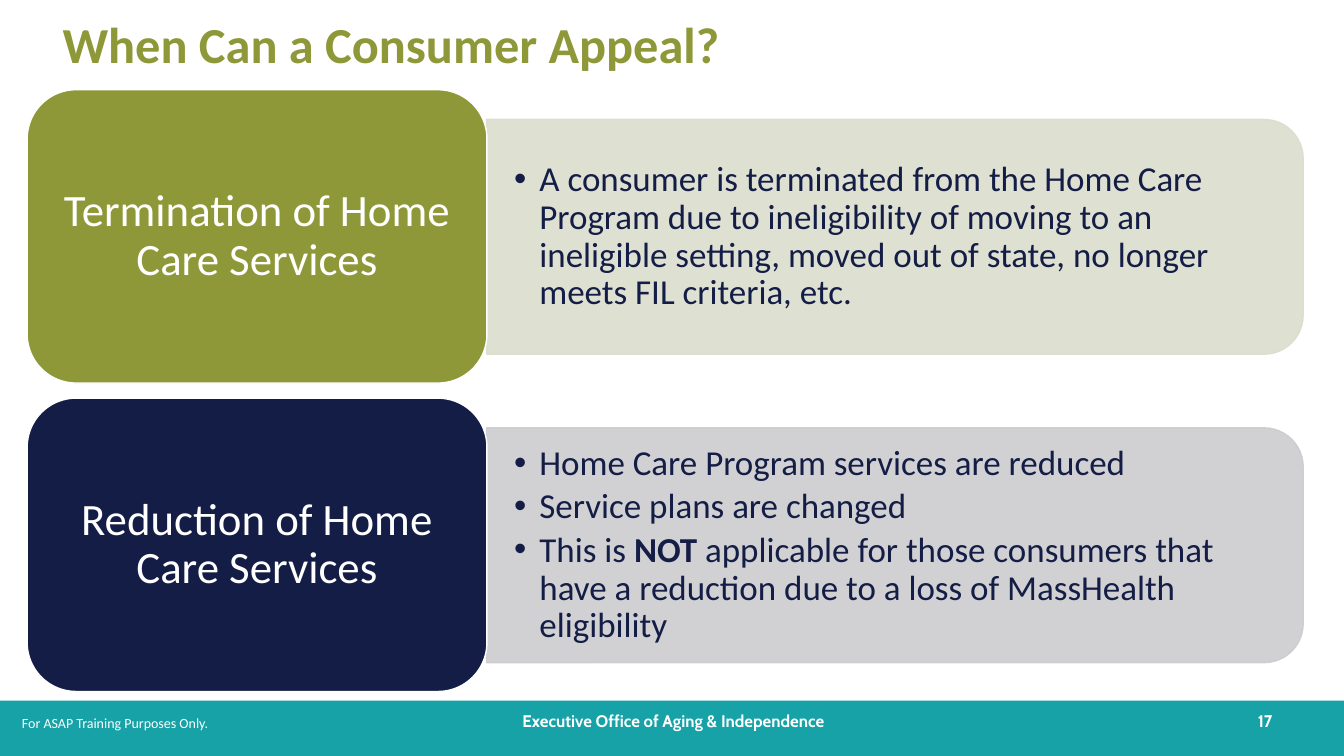
from lxml import etree
from pptx import Presentation
from pptx.dml.color import RGBColor
from pptx.enum.shapes import MSO_SHAPE
from pptx.enum.text import MSO_ANCHOR, MSO_AUTO_SIZE, PP_ALIGN
from pptx.oxml.ns import qn
from pptx.util import Emu, Pt

LEFT, CENTER, RIGHT = PP_ALIGN.LEFT, PP_ALIGN.CENTER, PP_ALIGN.RIGHT
TOP, MIDDLE = MSO_ANCHOR.TOP, MSO_ANCHOR.MIDDLE
NO_AUTOFIT = MSO_AUTO_SIZE.NONE
RECT, ROUNDED = MSO_SHAPE.RECTANGLE, MSO_SHAPE.ROUNDED_RECTANGLE
TWO_ROUNDED = MSO_SHAPE.ROUND_2_SAME_RECTANGLE
TWO_CONTENT_LAYOUT = 3
EMU_PER_PX = 9144  # 100 px to the inch
ROW_PITCH = 306

COLORS = {
    "teal": "16A2A7",
    "title": "8E9838",
    "olive": "8F9838",
    "olive tint": "DBDDCE",
    "navy": "141D45",
    "navy tint": "CCCCCF",
    "white": "FFFFFF",
}

REASONS = [
    ("Termination of Home Care Services", "olive", [
        ["A consumer is terminated from the Home Care Program due to ineligibility of "
         "moving to an ineligible setting, moved out of state, no longer meets FIL "
         "criteria, etc."],
    ]),
    ("Reduction of Home Care Services", "navy", [
        ["Home Care Program services are reduced"],
        ["Service plans are changed"],
        ["This is ", "NOT", " applicable for those consumers that have a reduction due "
         "to a loss of MassHealth eligibility"],
    ]),
]


def px(length):
    return Emu(length * EMU_PER_PX)


def color(name):
    return RGBColor.from_string(COLORS[name])


class SlideBuilder:
    def __init__(self, slide, font="Calibri", footer_font="Cabin"):
        self.slide = slide
        self.font = font
        self.footer_font = footer_font

    def place(self, item, box):
        item.left, item.top, item.width, item.height = map(px, box)

    def frame(self, item, anchor, insets=(10, 5)):
        frame = item.text_frame
        frame.word_wrap = True
        frame.auto_size = NO_AUTOFIT
        frame.vertical_anchor = anchor
        frame.margin_left = frame.margin_right = px(insets[0])
        frame.margin_top = frame.margin_bottom = px(insets[1])
        return frame

    def style(self, paragraph, size, tone, align=LEFT, bold=False, font=None, spacing=1.0):
        paragraph.alignment = align
        paragraph.line_spacing = spacing
        for run in paragraph.runs:
            run.font.name = font or self.font
            run.font.size = Pt(size)
            run.font.bold = bold
            run.font.color.rgb = color(tone)

    def title(self, words, box):
        heading = self.slide.shapes.title
        self.place(heading, box)
        frame = self.frame(heading, TOP, (0, 0))
        frame.text = words
        self.style(frame.paragraphs[0], 36, "title", bold=True, spacing=0.9)

    def shape(self, kind, box, fill, line=None):
        item = self.slide.shapes.add_shape(kind, *map(px, box))
        item.shadow.inherit = False
        item.fill.solid()
        item.fill.fore_color.rgb = color(fill)
        if line:
            item.line.color.rgb = color(line)
            item.line.width = Pt(1)
        else:
            item.line.fill.background()
        return item

    def panel(self, box, tint):
        """Add a translucent panel rounded on its right side only."""
        x, y, width, height = box
        shift = (width - height) // 2
        item = self.shape(TWO_ROUNDED, (x + shift, y - shift, height, width), tint, tint)
        item.rotation = 90
        for shade in item.element.spPr.iter(qn("a:srgbClr")):
            etree.SubElement(shade, qn("a:alpha"), val="90000")

    def card(self, words, box, fill):
        frame = self.frame(self.shape(ROUNDED, box, fill, "white"), MIDDLE, (14, 7))
        frame.text = words
        self.style(frame.paragraphs[0], 32, "white", CENTER, spacing=0.9)

    def bullets(self, placeholder, items, box):
        """Fill a body placeholder; every second run of an item is bold."""
        self.place(placeholder, box)
        self.slide.shapes.element.append(placeholder.element)  # in front of its panel
        frame = self.frame(placeholder, MIDDLE, (27, 14))
        for index, parts in enumerate(items):
            paragraph = frame.add_paragraph() if index else frame.paragraphs[0]
            properties = paragraph._p.get_or_add_pPr()
            properties.set("marL", str(px(25)))
            properties.set("indent", str(px(-25)))
            etree.SubElement(properties, qn("a:buChar"), char="•")
            for part in parts:
                paragraph.add_run().text = part
            self.style(paragraph, 25, "navy", spacing=0.9)
            paragraph.space_before = Pt(0)
            paragraph.space_after = Pt(4)
            for emphasis in paragraph.runs[1::2]:
                emphasis.font.bold = True

    def text(self, words, box, size, align=LEFT, anchor=TOP, bold=False, font=None):
        frame = self.frame(self.slide.shapes.add_textbox(*map(px, box)), anchor)
        frame.text = words
        self.style(frame.paragraphs[0], size, "white", align, bold, font)

    def footer(self, words, box, align):
        self.text(words, box, 12, align, MIDDLE, True, self.footer_font)


def main():
    deck = Presentation()
    deck.slide_width, deck.slide_height = px(1333), px(750)
    slide = deck.slides.add_slide(deck.slide_layouts[TWO_CONTENT_LAYOUT])
    builder = SlideBuilder(slide)

    builder.shape(RECT, (0, 695, 1333, 55), "teal")
    builder.footer("Executive Office of Aging & Independence", (443, 695, 450, 40), CENTER)
    builder.footer("17", (1221, 695, 51, 40), RIGHT)
    builder.title("When Can a Consumer Appeal?", (62, 20, 1208, 44))

    for row, (reason, tone, details) in enumerate(REASONS):
        offset = row * ROW_PITCH
        builder.panel((483, 118 + offset, 810, 233), f"{tone} tint")
        builder.bullets(slide.placeholders[row + 1], details, (483, 130 + offset, 799, 210))
        builder.card(reason, (27, 89 + offset, 456, 291), tone)

    builder.text("For ASAP Training Purposes Only.", (12, 704, 367, 27), 10)
    deck.save("out.pptx")


if __name__ == "__main__":
    main()
